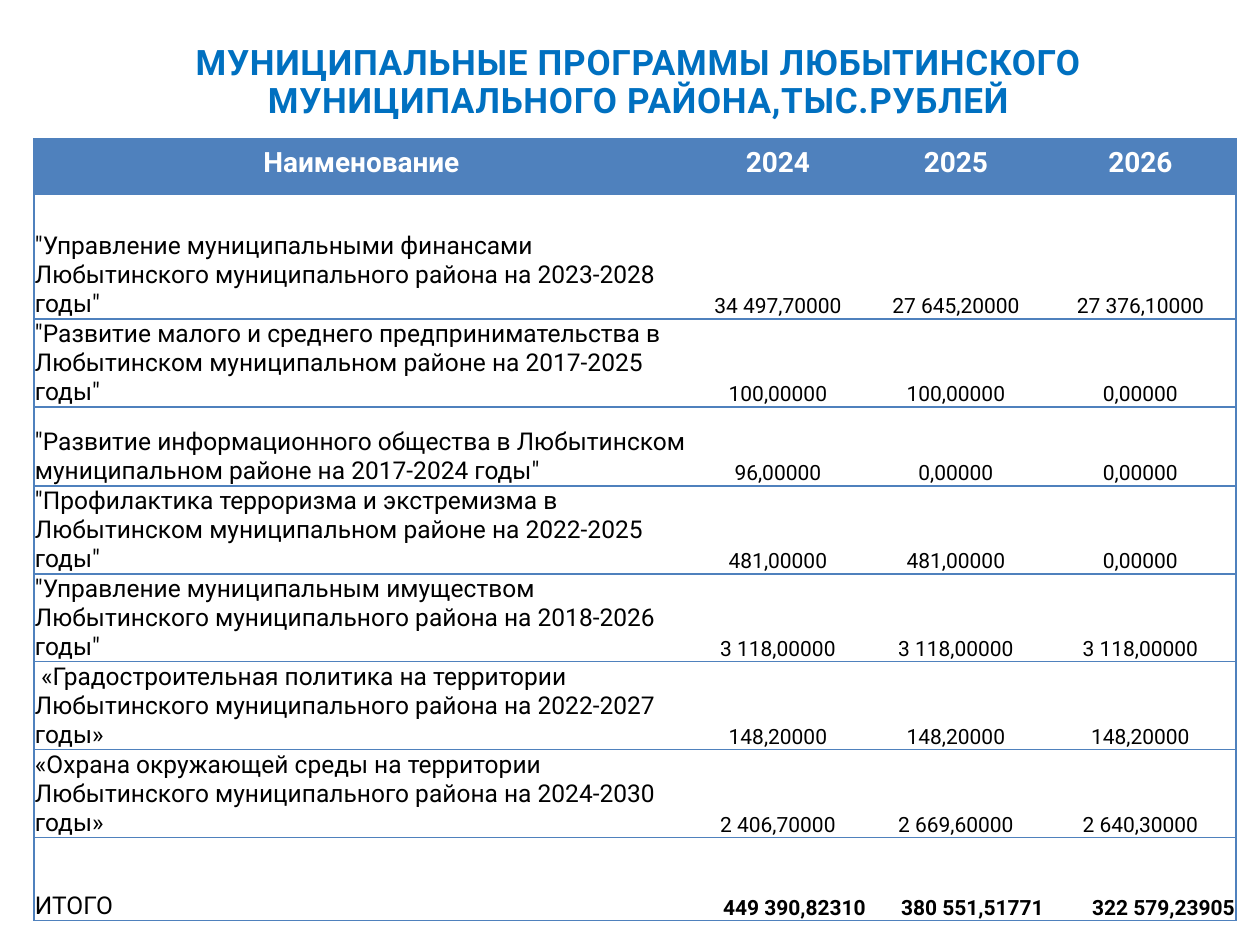
from lxml import etree
from pptx import Presentation
from pptx import util as u
from pptx.dml.color import RGBColor
from pptx.enum import text
from pptx.oxml import ns

PX = u.Inches(1) / 126
FONT = "Roboto"
BLUE = RGBColor(0x4F, 0x81, 0xBD)
TITLE_BLUE = RGBColor(0x00, 0x70, 0xC0)
WHITE = RGBColor(0xFF, 0xFF, 0xFF)
BLACK = RGBColor(0x00, 0x00, 0x00)
LEFT, CENTER, RIGHT = text.PP_ALIGN.LEFT, text.PP_ALIGN.CENTER, text.PP_ALIGN.RIGHT

TITLE = "МУНИЦИПАЛЬНЫЕ ПРОГРАММЫ ЛЮБЫТИНСКОГО МУНИЦИПАЛЬНОГО РАЙОНА,ТЫС.РУБЛЕЙ"
HEADER = ("Наименование", "2024", "2025", "2026")
PROGRAMS = [
    ('"Управление муниципальными финансами Любытинского муниципального района на 2023-2028 годы"',
     "34 497,70000", "27 645,20000", "27 376,10000"),
    ('"Развитие малого и среднего предпринимательства в Любытинском муниципальном районе на 2017-2025 годы"',
     "100,00000", "100,00000", "0,00000"),
    ('"Развитие информационного общества в Любытинском муниципальном районе на 2017-2024 годы"',
     "96,00000", "0,00000", "0,00000"),
    ('"Профилактика терроризма и экстремизма в Любытинском муниципальном районе на 2022-2025 годы"',
     "481,00000", "481,00000", "0,00000"),
    ('"Управление муниципальным имуществом Любытинского муниципального района на 2018-2026 годы"',
     "3 118,00000", "3 118,00000", "3 118,00000"),
    (" «Градостроительная политика на территории Любытинского муниципального района на 2022-2027 годы»",
     "148,20000", "148,20000", "148,20000"),
    ("«Охрана окружающей среды на территории Любытинского муниципального района на 2024-2030 годы»",
     "2 406,70000", "2 669,60000", "2 640,30000"),
]
TOTAL = ("ИТОГО", "449 390,82310", "380 551,51771", "322 579,23905")
COL_WIDTHS = (655, 178, 178, 191)
ROW_HEIGHTS = (55, 125, 58, 79, 84, 73, 69, 69, 83)


def px(n):
    return u.Emu(round(n * PX))


def format_text(p, size, color, bold, align):
    p.alignment = align
    for r in p.runs:
        f = r.font
        f.name, f.size, f.bold = FONT, u.Pt(size), bold
        f.color.rgb = color


def add_title(s):
    sp = s.shapes.title
    sp.left, sp.top, sp.width, sp.height = px(44), px(39), px(1189), px(37)
    tf = sp.text_frame
    tf.text = TITLE
    tf.word_wrap = True
    tf.auto_size = text.MSO_AUTO_SIZE.NONE
    tf.vertical_anchor = text.MSO_ANCHOR.TOP
    p = tf.paragraphs[0]
    p.line_spacing = 0.9
    format_text(p, 20, TITLE_BLUE, True, CENTER)
    p.runs[0].font._element.set("spc", "40")


def set_borders(cell, sides):
    tc_pr = cell._tc.get_or_add_tcPr()
    for side in "LRTB":
        ln = etree.SubElement(tc_pr, ns.qn(f"a:ln{side}"), w=str(u.Pt(1)))
        if side in sides:
            fill = etree.SubElement(ln, ns.qn("a:solidFill"))
            etree.SubElement(fill, ns.qn("a:srgbClr"), val=str(BLUE))
        else:
            etree.SubElement(ln, ns.qn("a:noFill"))


def fill_cell(cell, value, fill, size, color, bold, align):
    cell.text = value
    cell.fill.solid()
    cell.fill.fore_color.rgb = fill
    format_text(cell.text_frame.paragraphs[0], size, color, bold, align)


def format_header_cell(cell, value):
    fill_cell(cell, value, BLUE, 16, WHITE, True, CENTER)
    cell.vertical_anchor = text.MSO_ANCHOR.MIDDLE
    cell.margin_left = cell.margin_right = px(5)
    cell.margin_top = cell.margin_bottom = 0
    cell.text_frame.paragraphs[0].line_spacing = u.Pt(14)


def format_body_cell(cell, value, is_name, is_total):
    align = LEFT if is_name else RIGHT if is_total else CENTER
    fill_cell(cell, value, WHITE, 14 if is_name else 12, BLACK,
              is_total and not is_name, align)
    cell.vertical_anchor = text.MSO_ANCHOR.BOTTOM
    cell.margin_left = cell.margin_right = cell.margin_top = px(1)
    cell.margin_bottom = 0


def add_program_table(s):
    rows = [HEADER, *PROGRAMS, TOTAL]
    last = len(HEADER) - 1
    frame = s.shapes.add_table(len(rows), len(HEADER), px(34), px(139),
                               px(sum(COL_WIDTHS)), px(sum(ROW_HEIGHTS)))
    table = frame.table
    table.first_row = table.horz_banding = False
    for col, width in zip(table.columns, COL_WIDTHS):
        col.width = px(width)
    for row, height in zip(table.rows, ROW_HEIGHTS):
        row.height = px(height)
    for i, values in enumerate(rows):
        for j, value in enumerate(values):
            cell = table.cell(i, j)
            set_borders(cell, "TB" + "L" * (j == 0) + "R" * (j == last))
            if values is HEADER:
                format_header_cell(cell, value)
            else:
                format_body_cell(cell, value, j == 0, values is TOTAL)


def main():
    prs = Presentation()
    prs.slide_width, prs.slide_height = px(1260), px(945)
    s = prs.slides.add_slide(prs.slide_layouts[5])
    add_title(s)
    add_program_table(s)
    prs.save("out.pptx")


if __name__ == "__main__":
    main()
